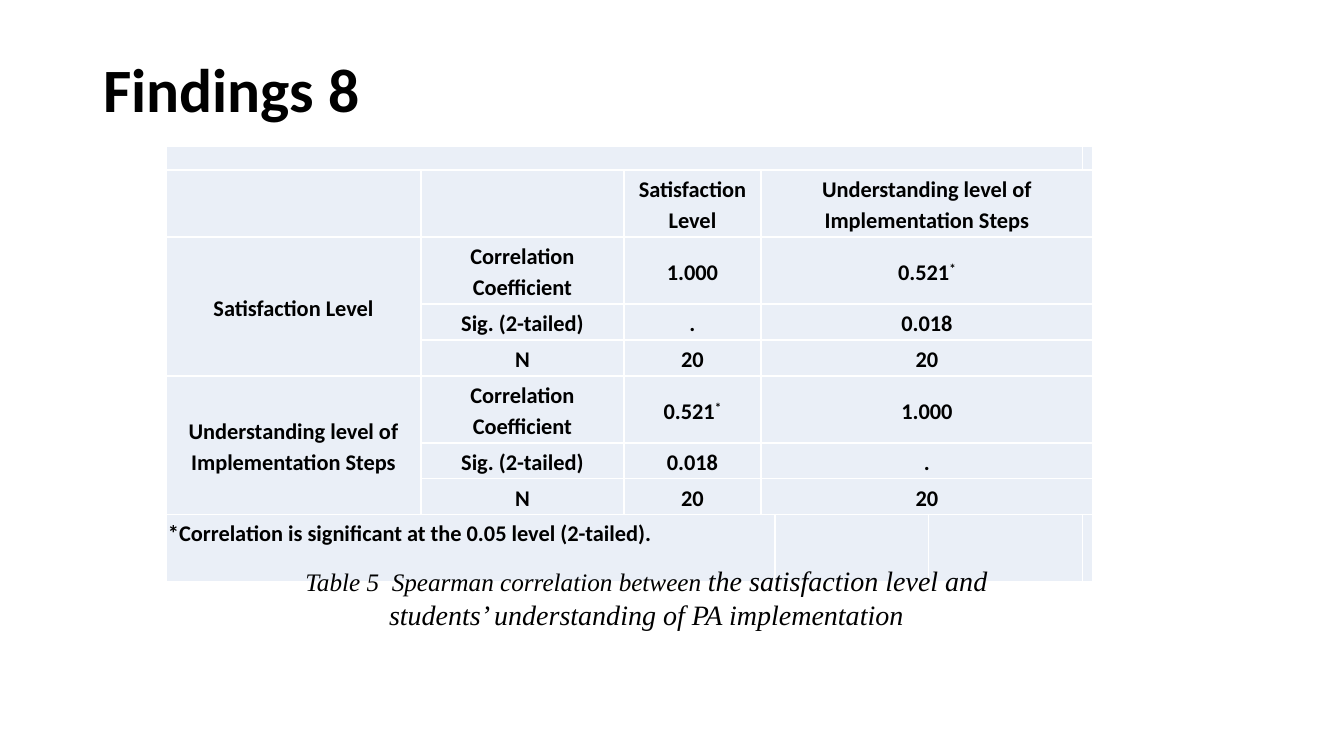
from lxml.etree import SubElement
from pptx import Presentation
from pptx.dml.color import RGBColor as RGB
from pptx.enum.text import MSO_ANCHOR as Anchor, MSO_AUTO_SIZE as Fit, PP_ALIGN as Align
from pptx.oxml.ns import qn
from pptx.util import Pt

SCALE = 914400 / 100.8  # EMU in one px


def px(n):
    return round(n * SCALE)


def color(code):
    return RGB.from_string(code)


def write(para, text, font="Calibri", size=16, bold=False, italic=False,
          ink="000000", base=None):
    run = para.add_run()
    run.text = text
    face = run.font
    face.name, face.size = font, Pt(size)
    face.bold, face.italic = bold, italic
    face.color.rgb = color(ink)
    if base:
        run._r.get_or_add_rPr().set("baseline", str(base * 1000))


class Page:
    fill, edge = "EAEFF7", "FFFFFF"

    def __init__(self, deck):
        self.slide = deck.slides.add_slide(deck.slide_layouts[5])

    def title(self, text, x, y, w, h):
        shape = self.slide.shapes.title
        shape.left, shape.top, shape.width, shape.height = map(px, (x, y, w, h))
        frame = shape.text_frame
        frame.auto_size, frame.vertical_anchor = Fit.NONE, Anchor.MIDDLE
        para = frame.paragraphs[0]
        para.alignment, para.line_spacing = Align.LEFT, 0.9
        write(para, text, size=44, bold=True)

    def caption(self, parts, x, y, w, h):
        frame = self.slide.shapes.add_textbox(*map(px, (x, y, w, h))).text_frame
        frame.word_wrap = True
        para = frame.paragraphs[0]
        para.alignment, para.space_after = Align.CENTER, Pt(10)
        for text, size in parts:
            write(para, text, font="Times New Roman", size=size, italic=True)

    def table(self, x, y, cols, rows):
        size = map(px, (x, y, sum(cols), sum(rows)))
        grid = self.slide.shapes.add_table(len(rows), len(cols), *size).table
        grid.first_row = grid.horz_banding = False
        for col, w in zip(grid.columns, cols):
            col.width = px(w)
        for row, h in zip(grid.rows, rows):
            row.height = px(h)
        for cell in grid.iter_cells():
            self.style(cell)
        return grid

    def style(self, cell):
        cell.margin_left = cell.margin_right = px(2)
        cell.margin_top = cell.margin_bottom = px(2)
        cell.vertical_anchor = Anchor.MIDDLE
        # Small type lets the empty rows stay low
        cell.text_frame.paragraphs[0]._p.get_or_add_endParaRPr().set("sz", "1000")
        props = cell._tc.get_or_add_tcPr()
        for side in ("lnL", "lnR", "lnT", "lnB"):
            line = SubElement(props, qn("a:" + side), w=str(Pt(1)))
            paint = SubElement(line, qn("a:solidFill"))
            SubElement(paint, qn("a:srgbClr"), val=self.edge)
        cell.fill.solid()
        cell.fill.fore_color.rgb = color(self.fill)

    def label(self, cell, text, align=Align.CENTER, mark=""):
        para = cell.text_frame.paragraphs[0]
        para.alignment, para.line_spacing = align, 1.15
        write(para, text, bold=True)
        if mark:
            write(para, mark, bold=True, base=30)


def main():
    deck = Presentation()
    deck.slide_width, deck.slide_height = px(1344), px(756)
    page = Page(deck)
    page.title("Findings 8", 93, 40, 1159, 105)

    # Correlation table
    grid = page.table(166, 146, [255, 203, 137, 14, 154, 154, 10],
                      [24, 67, 67, 36, 36, 67, 35, 36, 67])
    spans = [(0, 0, 0, 5), (2, 0, 4, 0), (5, 0, 7, 0), (8, 0, 8, 3)]
    spans += [(r, 3, r, 6) for r in range(1, 8)]
    for top, left, end, right in spans:
        grid.cell(top, left).merge(grid.cell(end, right))

    # Headings and values
    names = ["Satisfaction Level", "Understanding level of Implementation Steps"]
    for i, name in enumerate(names):
        page.label(grid.cell(1, 2 + i), name)
        page.label(grid.cell(2 + 3 * i, 0), name)
        for j in range(2):
            same = i == j
            stats = [("Correlation Coefficient", "1.000" if same else "0.521"),
                     ("Sig. (2-tailed)", "." if same else "0.018"),
                     ("N", "20")]
            for k, (stat, value) in enumerate(stats):
                row = 2 + 3 * i + k
                if j == 0:
                    page.label(grid.cell(row, 1), stat)
                mark = "*" if k == 0 and not same else ""
                page.label(grid.cell(row, 2 + j), value, mark=mark)

    # Note under the values
    note = grid.cell(8, 0)
    note.vertical_anchor = Anchor.TOP
    page.label(note, "*Correlation is significant at the 0.05 level (2-tailed).",
               align=Align.LEFT)

    page.caption([("Table 5  Spearman correlation between ", 18),
                  ("the satisfaction level and students’ understanding "
                   "of PA implementation", 20)], 255, 559, 783, 78)
    deck.save("out.pptx")


if __name__ == "__main__":
    main()
